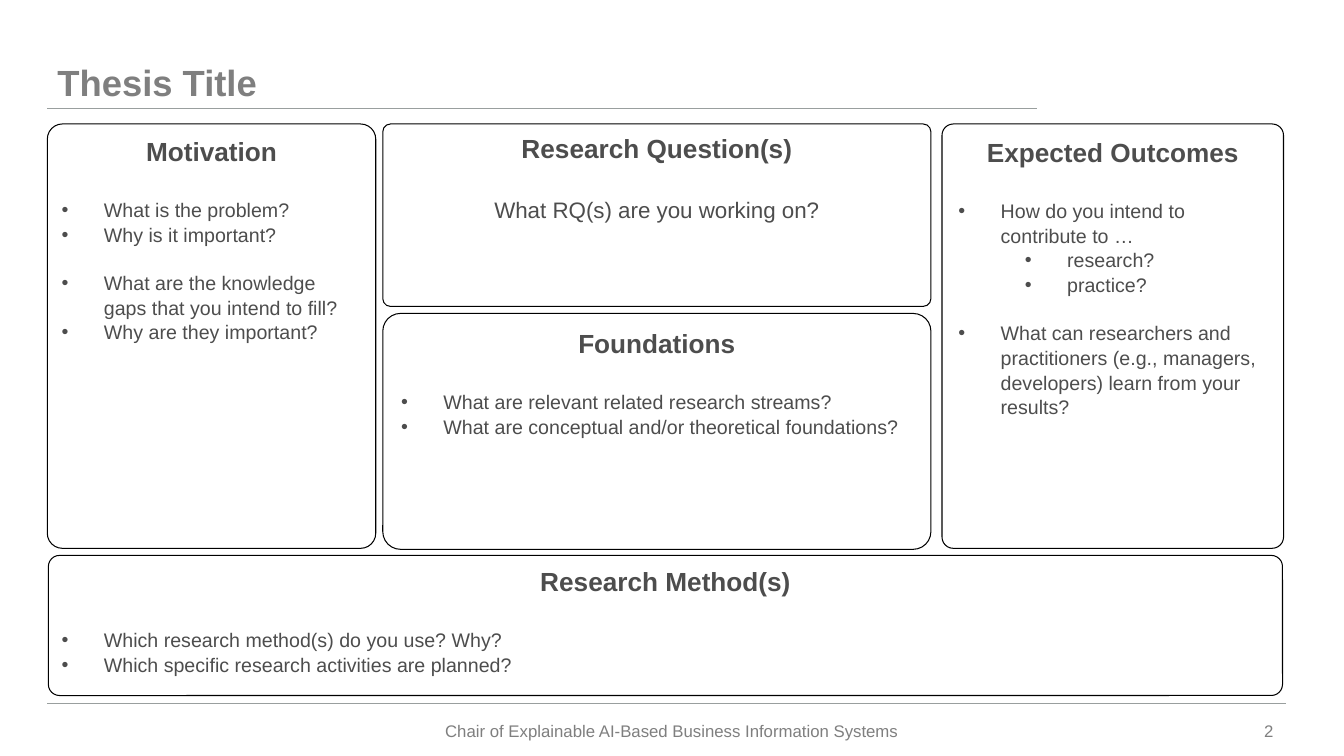
"""Build the one-page thesis outline slide."""
from dataclasses import dataclass

from lxml import etree
from pptx import Presentation
from pptx.dml.color import RGBColor
from pptx.enum.shapes import MSO_CONNECTOR, MSO_SHAPE
from pptx.enum.text import MSO_ANCHOR, MSO_AUTO_SIZE, PP_ALIGN
from pptx.oxml.ns import qn
from pptx.slide import Slide
from pptx.text.text import TextFrame, _Paragraph
from pptx.util import Inches, Pt

LEFT, CENTER, RIGHT = PP_ALIGN.LEFT, PP_ALIGN.CENTER, PP_ALIGN.RIGHT
TOP, MIDDLE, BOTTOM = MSO_ANCHOR.TOP, MSO_ANCHOR.MIDDLE, MSO_ANCHOR.BOTTOM
STRAIGHT = MSO_CONNECTOR.STRAIGHT
ROUNDED = MSO_SHAPE.ROUNDED_RECTANGLE
NO_AUTOFIT = MSO_AUTO_SIZE.NONE
TITLE_ONLY = 5


@dataclass(frozen=True)
class Theme:
    font: str = "Arial"
    muted: RGBColor = RGBColor(0x7F, 0x7F, 0x7F)
    body: RGBColor = RGBColor(0x4D, 0x4D, 0x4D)
    rule: RGBColor = RGBColor(0x99, 0x9F, 0x9E)
    border: RGBColor = RGBColor(0, 0, 0)
    card: RGBColor = RGBColor(0xFF, 0xFF, 0xFF)
    title_size: float = 26
    heading_size: float = 18.7
    question_size: float = 16
    item_size: float = 14
    footer_size: float = 12
    line_width: float = 0.75
    line_spacing: float = 1.05
    heading_gap: float = 21.7
    group_gap: float = 16.9
    hanging: float = 0.42
    sub_margin: float = 1.08


THEME = Theme()
TIGHT = (0.1, 0.05)
WIDE = (0.13, 0.07)
FOOTER = (0.12, 0.06)


@dataclass(frozen=True)
class Item:
    text: str
    level: int = 0
    new_group: bool = False
    bulleted: bool = True


@dataclass(frozen=True)
class Card:
    heading: str
    box: tuple[float, float, float, float]
    corner: float
    insets: tuple[float, float]
    items: tuple[Item, ...]


CARDS = (
    Card("Motivation", (0.47, 1.23, 3.26, 4.21), 0.046, TIGHT, (
        Item("What is the problem?"),
        Item("Why is it important?"),
        Item("What are the knowledge gaps that you intend to fill?", new_group=True),
        Item("Why are they important?"),
    )),
    Card("Foundations", (3.8, 3.11, 5.44, 2.34), 0.075, WIDE, (
        Item("What are relevant related research streams?"),
        Item("What are conceptual and/or theoretical foundations?"),
    )),
    Card("Expected Outcomes", (9.35, 1.23, 3.39, 4.21), 0.033, WIDE, (
        Item("How do you intend to contribute to …"),
        Item("research?", level=1),
        Item("practice?", level=1),
        Item("What can researchers and practitioners (e.g., managers, developers) "
             "learn from your results?", new_group=True),
    )),
    Card("Research Method(s)", (0.48, 5.51, 12.25, 1.39), 0.08, TIGHT, (
        Item("Which research method(s) do you use? Why?"),
        Item("Which specific research activities are planned?"),
    )),
    Card("Research Question(s)", (3.8, 1.23, 5.44, 1.81), 0.042, TIGHT, (
        Item("What RQ(s) are you working on?", bulleted=False),
    )),
)


def add_text(paragraph: _Paragraph, text: str, size: float, color: RGBColor,
             bold: bool = False) -> None:
    run = paragraph.add_run()
    run.text = text
    run.font.name = THEME.font
    run.font.size = Pt(size)
    run.font.bold = bold
    run.font.color.rgb = color


def set_frame(frame: TextFrame, anchor: MSO_ANCHOR, insets: tuple[float, float]) -> None:
    frame.word_wrap = True
    frame.auto_size = NO_AUTOFIT
    frame.vertical_anchor = anchor
    frame.margin_left = frame.margin_right = Inches(insets[0])
    frame.margin_top = frame.margin_bottom = Inches(insets[1])


def add_bullet(paragraph: _Paragraph, level: int) -> None:
    margin = THEME.sub_margin if level else THEME.hanging
    paragraph.level = level
    properties = paragraph._p.get_or_add_pPr()
    properties.set("marL", str(Inches(margin)))
    properties.set("indent", str(-Inches(THEME.hanging)))
    etree.SubElement(properties, qn("a:buFont"), typeface=THEME.font)
    etree.SubElement(properties, qn("a:buChar"), char="•")


def add_rule(slide: Slide, right: float, y: float) -> None:
    rule = slide.shapes.add_connector(
        STRAIGHT, Inches(0.47), Inches(y), Inches(right), Inches(y))
    rule.line.color.rgb = THEME.rule
    rule.line.width = Pt(THEME.line_width)
    etree.SubElement(rule._element.spPr, qn("a:effectLst"))


def add_footer(slide: Slide, text: str, left: float, width: float,
               alignment: PP_ALIGN) -> None:
    footer = slide.shapes.add_textbox(
        Inches(left), Inches(7.05), Inches(width), Inches(0.39))
    set_frame(footer.text_frame, MIDDLE, FOOTER)
    paragraph = footer.text_frame.paragraphs[0]
    paragraph.alignment = alignment
    add_text(paragraph, text, THEME.footer_size, THEME.muted)


def add_title(slide: Slide, text: str) -> None:
    title = slide.shapes.title
    title.left, title.top = Inches(0.47), Inches(0.36)
    title.width, title.height = Inches(9.82), Inches(0.72)
    set_frame(title.text_frame, BOTTOM, TIGHT)
    paragraph = title.text_frame.paragraphs[0]
    paragraph.alignment = LEFT
    paragraph.line_spacing = Pt(24)
    add_text(paragraph, text, THEME.title_size, THEME.muted, bold=True)


def add_card(slide: Slide, card: Card) -> None:
    panel = slide.shapes.add_shape(ROUNDED, *map(Inches, card.box))
    panel.adjustments[0] = card.corner
    panel.shadow.inherit = False
    panel.fill.solid()
    panel.fill.fore_color.rgb = THEME.card
    panel.line.color.rgb = THEME.border
    panel.line.width = Pt(THEME.line_width)
    frame = panel.text_frame
    set_frame(frame, TOP, card.insets)
    heading = frame.paragraphs[0]
    heading.alignment = CENTER
    heading.line_spacing = THEME.line_spacing
    heading.space_after = Pt(THEME.heading_gap)
    add_text(heading, card.heading, THEME.heading_size, THEME.body, bold=True)
    for item in card.items:
        paragraph = frame.add_paragraph()
        if item.bulleted:
            add_bullet(paragraph, item.level)
        paragraph.alignment = LEFT if item.bulleted else CENTER
        paragraph.line_spacing = THEME.line_spacing
        paragraph.space_before = Pt(THEME.group_gap if item.new_group else 0)
        size = THEME.item_size if item.bulleted else THEME.question_size
        add_text(paragraph, item.text, size, THEME.body)


def main() -> None:
    deck = Presentation()
    deck.slide_width, deck.slide_height = Inches(13.34), Inches(7.5)
    slide = deck.slides.add_slide(deck.slide_layouts[TITLE_ONLY])
    add_rule(slide, 12.76, 6.98)
    add_rule(slide, 10.29, 1.08)
    add_title(slide, "Thesis Title")
    add_footer(slide, "Chair of Explainable AI-Based Business Information Systems",
               4.29, 4.76, CENTER)
    add_footer(slide, "2", 11.97, 0.79, RIGHT)
    for card in CARDS:
        add_card(slide, card)
    deck.save("out.pptx")


if __name__ == "__main__":
    main()
